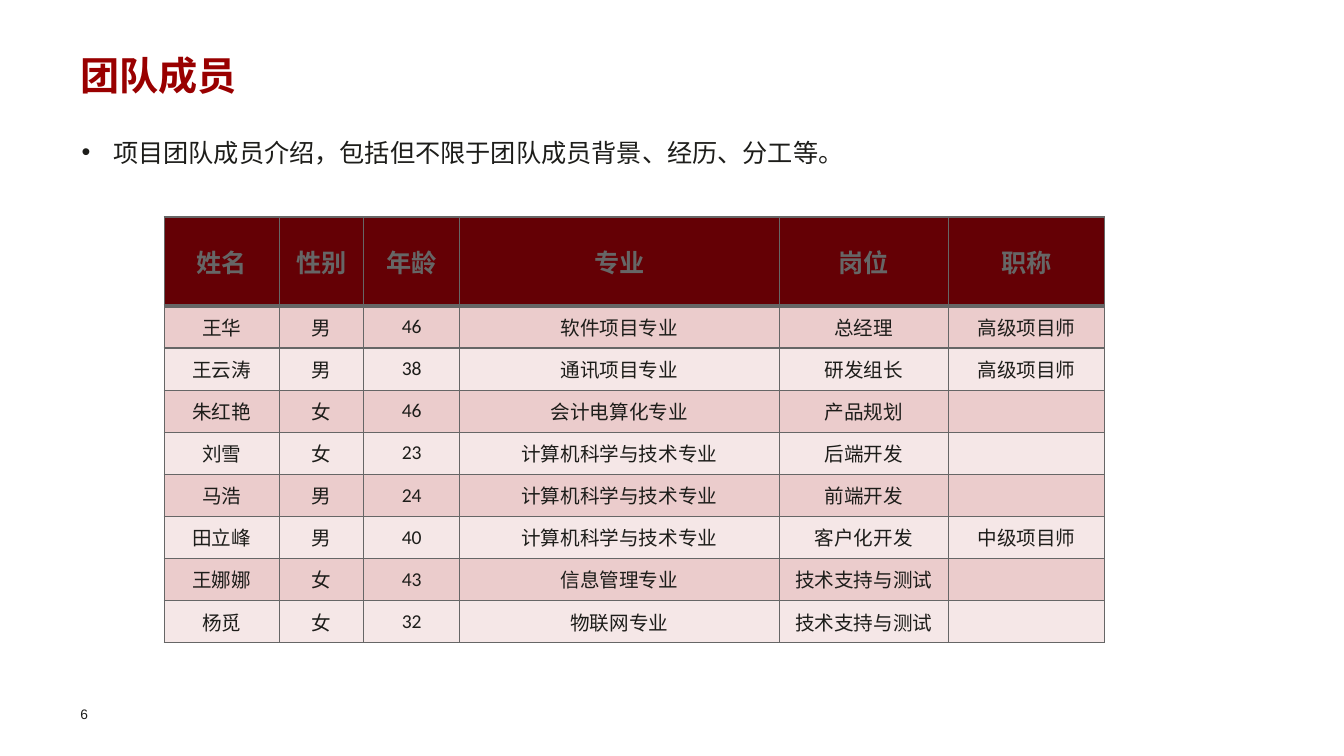
from lxml.etree import SubElement
from pptx import Presentation
from pptx.dml.color import RGBColor
from pptx.enum.text import MSO_ANCHOR, MSO_AUTO_SIZE, PP_ALIGN
from pptx.oxml.ns import qn
from pptx.util import Cm, Pt

TITLE = "团队成员"
INTRO = "项目团队成员介绍，包括但不限于团队成员背景、经历、分工等。"
PAGE_NUMBER = "6"
HEADINGS = ("姓名", "性别", "年龄", "专业", "岗位", "职称")
MEMBERS = [
    ("王华", "男", "46", "软件项目专业", "总经理", "高级项目师"),
    ("王云涛", "男", "38", "通讯项目专业", "研发组长", "高级项目师"),
    ("朱红艳", "女", "46", "会计电算化专业", "产品规划", ""),
    ("刘雪", "女", "23", "计算机科学与技术专业", "后端开发", ""),
    ("马浩", "男", "24", "计算机科学与技术专业", "前端开发", ""),
    ("田立峰", "男", "40", "计算机科学与技术专业", "客户化开发", "中级项目师"),
    ("王娜娜", "女", "43", "信息管理专业", "技术支持与测试", ""),
    ("杨觅", "女", "32", "物联网专业", "技术支持与测试", ""),
]
COLUMN_WIDTHS = (2.9, 2.13, 2.42, 8.05, 4.27, 3.94)
HEADER_HEIGHT, MEMBER_HEIGHT = 2.24, 1.06
CHINESE_FONT = "Noto Sans CJK SC"
GREY, DARK_RED = "666666", "640005"
BANDS = ("EBCCCC", "F5E7E7")


def color(value):
    return RGBColor.from_string(value)


def style(para, size, ink, latin, bold=False, align=PP_ALIGN.LEFT):
    para.alignment = align
    font = para.font
    font.size, font.bold, font.name = Pt(size), bold, latin
    font.color.rgb = color(ink)
    properties = para._p.get_or_add_pPr().find(qn("a:defRPr"))
    SubElement(properties, qn("a:ea"), typeface=CHINESE_FONT)


def place(box, left, top, width, height, text):
    box.left, box.top, box.width, box.height = Cm(left), Cm(top), Cm(width), Cm(height)
    frame = box.text_frame
    frame.margin_left = frame.margin_top = frame.margin_right = frame.margin_bottom = 0
    frame.word_wrap = True
    frame.auto_size = MSO_AUTO_SIZE.NONE
    frame.vertical_anchor = MSO_ANCHOR.TOP
    frame.text = text
    para = frame.paragraphs[0]
    para.space_before = Pt(0)
    return para


def add_borders(cell, widths):
    properties = cell._tc.get_or_add_tcPr()
    for side, width in zip("LRTB", widths):
        line = SubElement(properties, qn(f"a:ln{side}"), w=str(Pt(width)))
        SubElement(SubElement(line, qn("a:solidFill")), qn("a:srgbClr"), val=GREY)


def add_team_table(page):
    rows = [HEADINGS, *MEMBERS]
    heights = [HEADER_HEIGHT] + [MEMBER_HEIGHT] * len(MEMBERS)
    table = page.shapes.add_table(
        len(rows), len(HEADINGS), Cm(4.14), Cm(5.47),
        Cm(sum(COLUMN_WIDTHS)), Cm(sum(heights)),
    ).table
    for column, width in zip(table.columns, COLUMN_WIDTHS):
        column.width = Cm(width)
    for index, (texts, height) in enumerate(zip(rows, heights)):
        table.rows[index].height = Cm(height)
        header = index == 0
        for column, text in enumerate(texts):
            cell = table.cell(index, column)
            cell.text = text
            cell.vertical_anchor = MSO_ANCHOR.MIDDLE
            add_borders(cell, (1, 1, 3 if index == 1 else 1, 3 if header else 1))
            cell.fill.solid()
            cell.fill.fore_color.rgb = color(DARK_RED if header else BANDS[(index - 1) % 2])
            style(cell.text_frame.paragraphs[0], 18 if header else 14,
                  GREY if header else "1D1D1A", "Calibri", header, PP_ALIGN.CENTER)


def main():
    deck = Presentation()
    deck.slide_width, deck.slide_height = Cm(33.88), Cm(19.05)
    page = deck.slides.add_slide(deck.slide_layouts[1])

    title = place(page.shapes.title, 2.03, 1.27, 29.85, 1.09, TITLE)
    title.line_spacing = Pt(34.3)
    style(title, 28, "990000", CHINESE_FONT, bold=True)

    intro = place(page.placeholders[1], 2.06, 3.07, 29.82, 11.81, INTRO)
    intro.line_spacing = 1.5
    style(intro, 18, "1D1D1A", CHINESE_FONT)
    indent = Cm(0.79)
    properties = intro._p.get_or_add_pPr()
    properties.set("marL", str(indent))
    properties.set("indent", str(-indent))

    add_team_table(page)

    number_box = page.shapes.add_textbox(0, 0, 0, 0)
    number = place(number_box, 2.03, 17.78, 1.4, 0.41, PAGE_NUMBER)
    style(number, 9.8, "1D1D1B", "Arial")

    deck.save("out.pptx")


if __name__ == "__main__":
    main()
